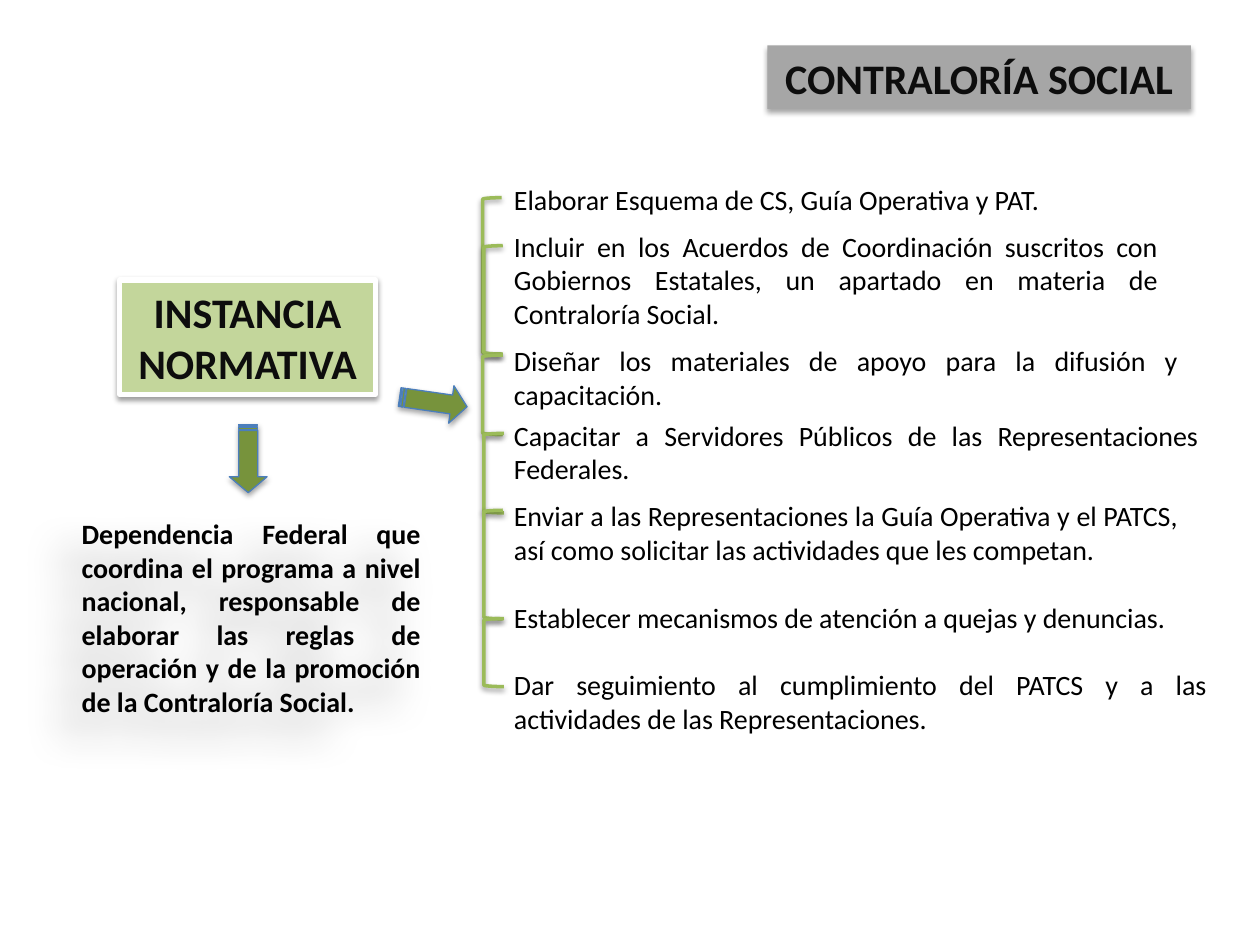
from lxml import etree
from pptx import Presentation
from pptx.dml.color import RGBColor
from pptx.enum import shapes, text
from pptx.oxml import ns
from pptx.util import Pt

rgb = RGBColor.from_string
KIND = shapes.MSO_SHAPE
ALIGN = text.PP_ALIGN


def shade(shape, blur=3.1, dist=1.8, angle=90, alpha=35):
    """Replace the inherited shadow with an outer one."""
    shape.shadow.inherit = False
    effects = shape._element.spPr.find(ns.qn("a:effectLst"))
    outer = etree.SubElement(
        effects, ns.qn("a:outerShdw"), blurRad=str(Pt(blur)),
        dist=str(Pt(dist)), dir=str(angle * 60000), algn="ctr", rotWithShape="0")
    color = etree.SubElement(outer, ns.qn("a:srgbClr"), val="000000")
    etree.SubElement(color, ns.qn("a:alpha"), val=str(alpha * 1000))


def write(shape, words, size, color, align, bold=False,
          anchor=text.MSO_ANCHOR.TOP):
    frame = shape.text_frame
    frame.word_wrap = True
    frame.auto_size = text.MSO_AUTO_SIZE.NONE
    frame.vertical_anchor = anchor
    para = frame.paragraphs[0]
    para.alignment = align
    run = para.add_run()
    run.text = words
    font = run.font
    font.name, font.size, font.bold = "Calibri", Pt(size), bold
    font.color.rgb = rgb(color)


deck = Presentation()
deck.slide_width, deck.slide_height = Pt(720), Pt(540)
slide = deck.slides.add_slide(deck.slide_layouts[5])
items = slide.shapes

# Title
title = items.title
title.left, title.top, title.width, title.height = Pt(438.5), Pt(26), Pt(242), Pt(36.3)
title.fill.solid()
title.fill.fore_color.rgb = rgb("A6A6A6")
shade(title)
write(title, "CONTRALORÍA SOCIAL", 24, "0D0D0D", ALIGN.CENTER, True,
      text.MSO_ANCHOR.MIDDLE)

# Definition, with a soft shadow behind its words
note = items.add_textbox(Pt(39.6), Pt(291.6), Pt(208), Pt(124))
shade(note, 23, 18, 135)
write(note, "Dependencia Federal que coordina el programa a nivel nacional, "
      "responsable de elaborar las reglas de operación y de la promoción de la "
      "Contraloría Social.", 16, "000000", ALIGN.JUSTIFY, True)

# Main box
box = items.add_shape(KIND.RECTANGLE, Pt(68.4), Pt(160), Pt(146.2), Pt(65.4))
box.fill.solid()
box.fill.fore_color.rgb = rgb("C3D69B")
box.line.color.rgb = rgb("FFFFFF")
box.line.width = Pt(3)
shade(box, dist=1.6, alpha=38)
write(box, "INSTANCIA NORMATIVA", 24, "0D0D0D", ALIGN.CENTER, True,
      text.MSO_ANCHOR.MIDDLE)

# Duties: top, width, height, words
duties = [
    (100.8, 320.4, 26.6, "Elaborar Esquema de CS, Guía Operativa y PAT."),
    (127.4, 382.3, 65.5, "Incluir en los Acuerdos de Coordinación suscritos con "
     "Gobiernos Estatales, un apartado en materia de Contraloría Social."),
    (193, 393.8, 46, "Diseñar los materiales de apoyo para la difusión y "
     "capacitación."),
    (235.4, 405.4, 46, "Capacitar a Servidores Públicos de las Representaciones "
     "Federales."),
    (281.5, 393.8, 46, "Enviar a las Representaciones la Guía Operativa y el "
     "PATCS, así como solicitar las actividades que les competan."),
    (339.8, 393.8, 26.6, "Establecer mecanismos de atención a quejas y denuncias."),
    (378, 410.4, 72.7, "Dar seguimiento al cumplimiento del PATCS y a las "
     "actividades de las Representaciones."),
]
for top, width, height, words in duties:
    duty = items.add_textbox(Pt(286.6), Pt(top), Pt(width), Pt(height))
    write(duty, words, 16, "000000", ALIGN.JUSTIFY)

# Brackets: left, top, width, height
for spot in [(275.8, 113, 10.8, 89.3), (276.5, 140.4, 10.8, 62),
             (275.8, 203, 11.5, 45.4), (276.5, 247.7, 11.5, 45.4),
             (276.5, 291.6, 10.8, 62), (276.5, 353.5, 11.5, 38.9)]:
    brace = items.add_shape(KIND.LEFT_BRACKET, *map(Pt, spot))
    brace.fill.background()
    brace.line.color.rgb = rgb("9BBB59")
    brace.line.width = Pt(2)
    shade(brace, dist=1.6, alpha=38)

# Arrows from the main box
for left, top, turn in [(122.4, 251.3, 90), (228.2, 218.9, 8.1)]:
    arrow = items.add_shape(KIND.STRIPED_RIGHT_ARROW, Pt(left), Pt(top),
                            Pt(38.9), Pt(21.6))
    arrow.adjustments[0], arrow.adjustments[1] = 0.5, 0.42
    arrow.rotation = turn
    arrow.fill.solid()
    arrow.fill.fore_color.rgb = rgb("77933C")
    arrow.line.color.rgb = rgb("4B7EBC")
    arrow.line.width = Pt(0.75)
    shade(arrow)

deck.save("out.pptx")
